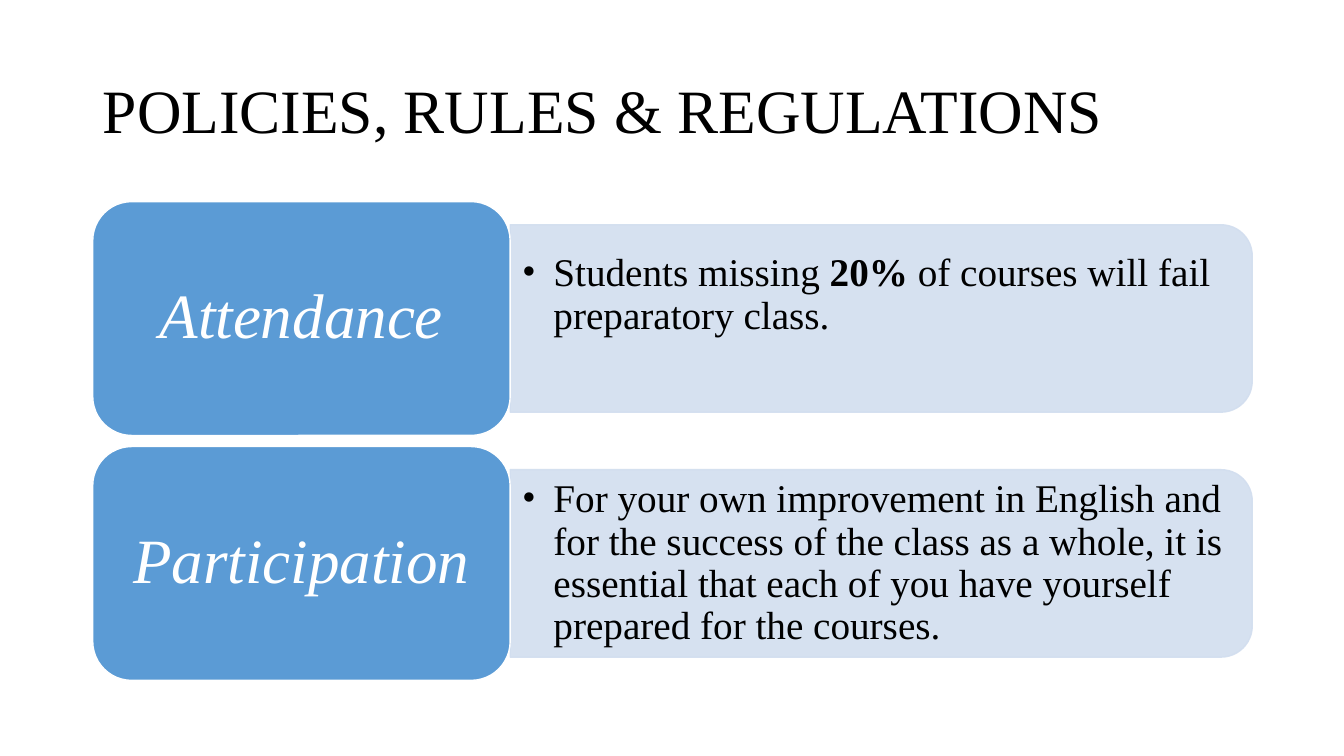
from lxml.etree import SubElement
from pptx import Presentation
from pptx.dml.color import RGBColor
from pptx.enum.shapes import MSO_SHAPE
from pptx.enum.text import MSO_ANCHOR, MSO_AUTO_SIZE, PP_ALIGN
from pptx.oxml.ns import qn
from pptx.util import Inches, Pt

FONT = "Times New Roman"
BLACK = RGBColor(0x00, 0x00, 0x00)
WHITE = RGBColor(0xFF, 0xFF, 0xFF)
BLUE = RGBColor(0x5B, 0x9B, 0xD5)
PALE = RGBColor(0xD2, 0xDE, 0xEF)

# Label, text runs as (words, bold), bottom inset of the text
RULES = [
    ("Attendance",
     [("Students missing ", False), ("20% ", True),
      ("of courses will fail preparatory class.", False)], 0.52),
    ("Participation",
     [("For your own improvement in English and for the success of the class "
       "as a whole, it is essential that each of you have yourself prepared "
       "for the courses.", False)], 0.06),
]
LEFT, TOP, STEP = 0.92, 2, 2.43


def add_block(kind, box, fill, line):
    block = slide.shapes.add_shape(kind, *map(Inches, box))
    block.shadow.inherit = False
    block.fill.solid()
    block.fill.fore_color.rgb = fill
    block.line.color.rgb = line
    block.line.width = Pt(1)
    return block


def style(frame, size, color, insets):
    """Format the frame's first paragraph and set insets left, top, right, bottom."""
    frame.word_wrap = True
    frame.auto_size = MSO_AUTO_SIZE.NONE
    frame.vertical_anchor = MSO_ANCHOR.MIDDLE
    (frame.margin_left, frame.margin_top,
     frame.margin_right, frame.margin_bottom) = map(Inches, insets)
    para = frame.paragraphs[0]
    para.line_spacing = 0.9
    para.font.name = FONT
    para.font.size = Pt(size)
    para.font.color.rgb = color
    return para


deck = Presentation()
deck.slide_width, deck.slide_height = Inches(13.33), Inches(7.5)
slide = deck.slides.add_slide(deck.slide_layouts[5])

title = slide.shapes.title
title.left, title.top = Inches(LEFT), Inches(0.4)
title.width, title.height = Inches(11.5), Inches(1.45)
title.text_frame.text = "POLICIES, RULES & REGULATIONS"
head = style(title.text_frame, 44, BLACK, (0.1, 0.05, 0.1, 0.05))
head.alignment = PP_ALIGN.LEFT

for row, (name, runs, bottom) in enumerate(RULES):
    top = TOP + row * STEP

    panel = add_block(MSO_SHAPE.ROUND_2_SAME_RECTANGLE,
                      (7.81, top - 2.52, 1.86, 7.36), PALE, PALE)
    panel.rotation = 90
    for color in panel.element.spPr.iter(qn("a:srgbClr")):
        SubElement(color, qn("a:alpha"), val="90000")

    note = slide.shapes.add_textbox(Inches(5.06), Inches(top + 0.32),
                                    Inches(7.27), Inches(1.68))
    para = style(note.text_frame, 28, BLACK, (0.12, 0.06, 0.12, bottom))
    for words, bold in runs:
        run = para.add_run()
        run.text = words
        run.font.bold = bold
    props = para._p.get_or_add_pPr()
    props.set("marL", str(Inches(0.31)))
    props.set("indent", str(-Inches(0.31)))
    face = SubElement(props, qn("a:buFont"), typeface=FONT)
    bullet = SubElement(props, qn("a:buChar"), char="•")
    for part in (face, bullet):
        props.find(qn("a:defRPr")).addprevious(part)

    label = add_block(MSO_SHAPE.ROUNDED_RECTANGLE,
                      (LEFT, top, 4.14, 2.32), BLUE, WHITE)
    label.text_frame.text = name
    para = style(label.text_frame, 45, WHITE, (0.15, 0.09, 0.15, 0.09))
    para.alignment = PP_ALIGN.CENTER
    para.font.italic = True

deck.save("out.pptx")
